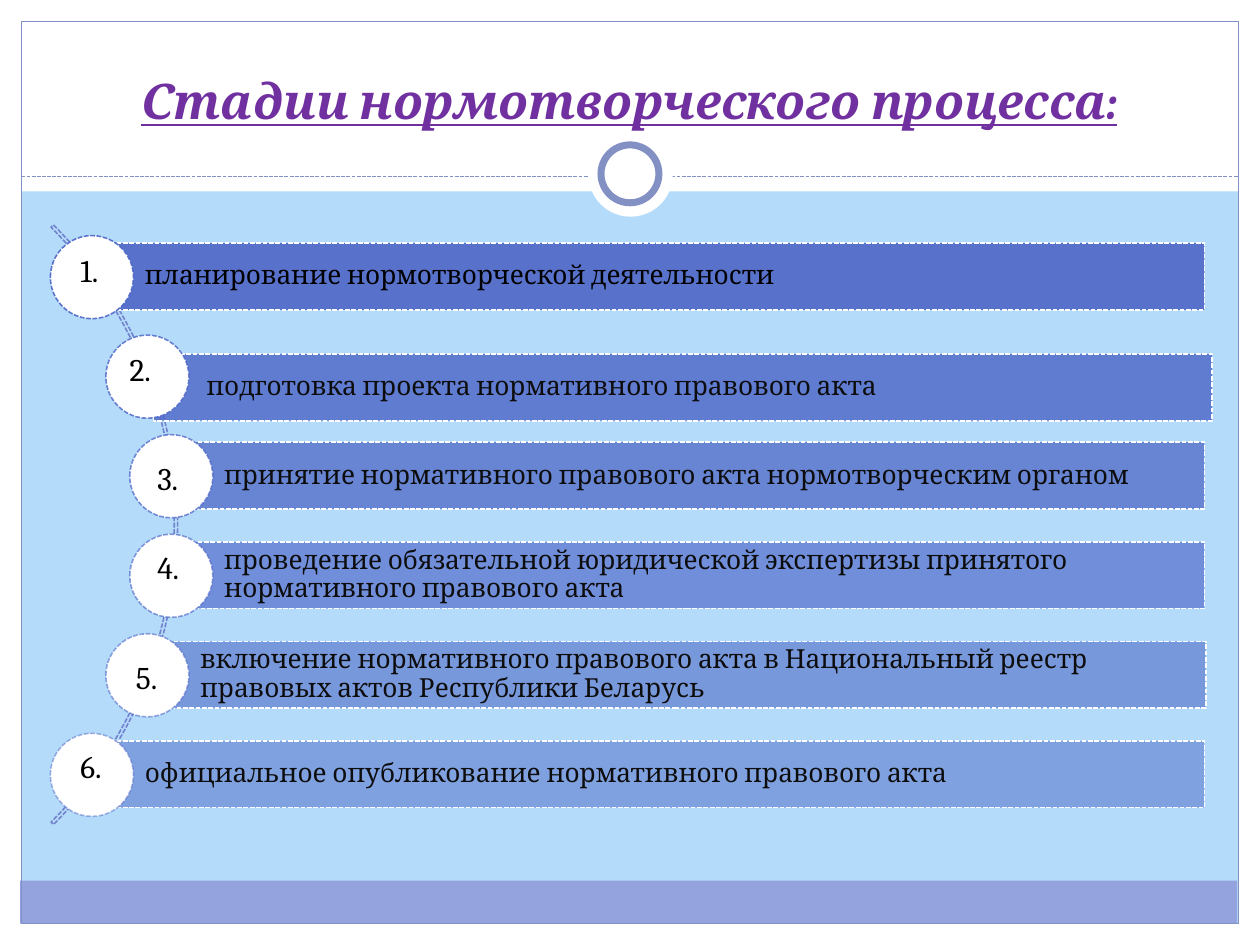
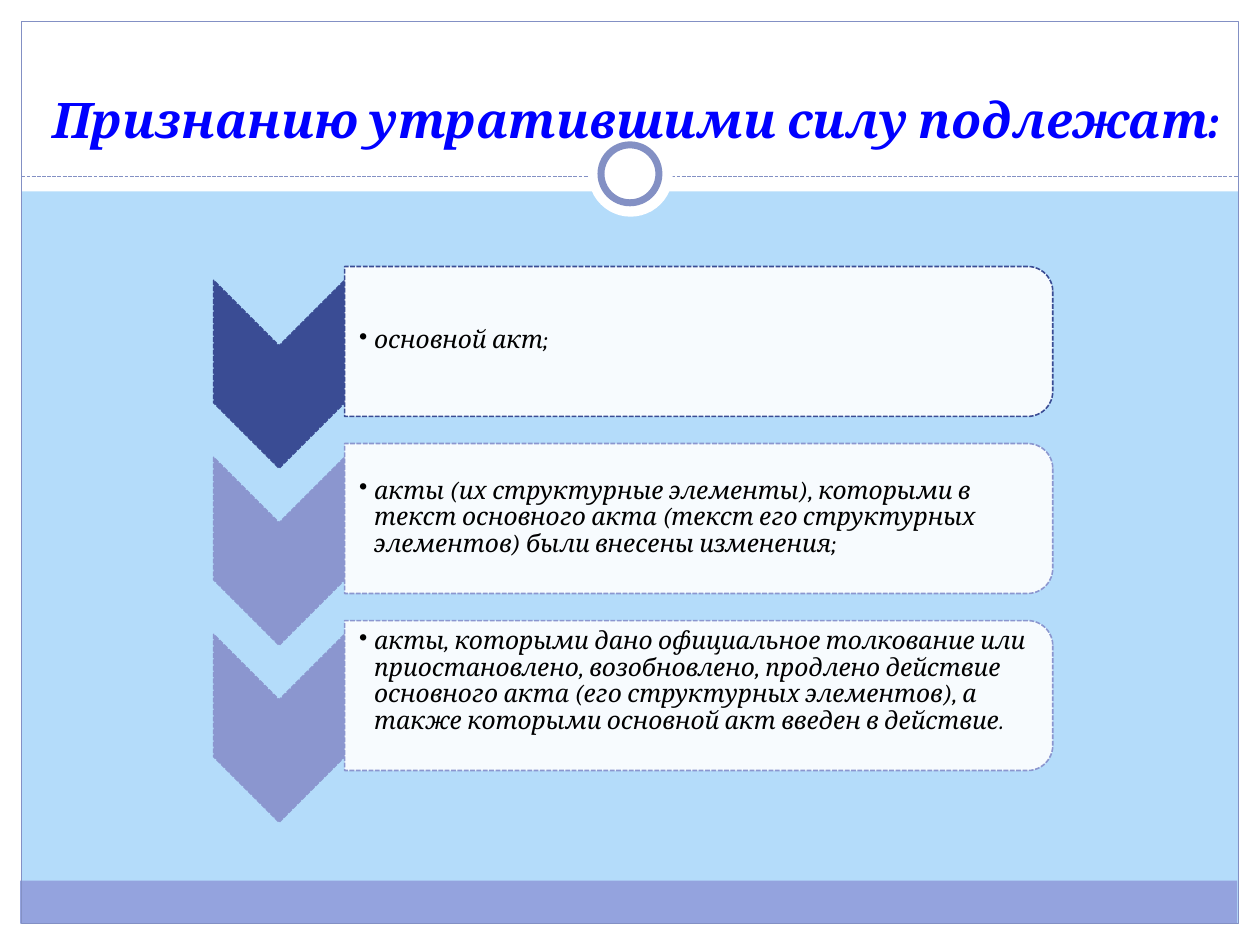
"""Build two slides on rule-making stages and acts to be repealed."""
import lxml.etree
import pptx
import pptx.dml.color
import pptx.enum.dml
import pptx.enum.shapes
import pptx.enum.text
import pptx.oxml
import pptx.oxml.ns
import pptx.util

Inches = pptx.util.Inches
Pt = pptx.util.Pt
RGBColor = pptx.dml.color.RGBColor
SHAPE = pptx.enum.shapes.MSO_SHAPE
ALIGN = pptx.enum.text.PP_ALIGN
ANCHOR = pptx.enum.text.MSO_ANCHOR
qn = pptx.oxml.ns.qn

SKY = RGBColor(0xB4, 0xDC, 0xFA)
WHITE = RGBColor(0xFF, 0xFF, 0xFF)
BLACK = RGBColor(0x00, 0x00, 0x00)
INK = RGBColor(0x0D, 0x0D, 0x0D)
BAND = RGBColor(0x94, 0xA3, 0xDE)
FRAME = RGBColor(0x83, 0x90, 0xC4)
PURPLE = RGBColor(0x70, 0x30, 0xA0)
BLUE = RGBColor(0x00, 0x00, 0xFF)
STAGE = RGBColor(0x4E, 0x67, 0xC8)
ARC = RGBColor(0x73, 0x82, 0xCE)
NAVY = RGBColor(0x3A, 0x4C, 0x94)
LILAC = RGBColor(0x8B, 0x96, 0xCF)

STAGES = [
    ("планирование нормотворческой деятельности", 0.4, (0.73, 1.93, 8.83), (0.54, 1.94)),
    ("подготовка проекта нормативного правового акта", 0.84, (1.22, 2.81, 8.4), (0.93, 2.73)),
    ("принятие нормативного правового акта нормотворческим органом",
     1.03, (1.36, 3.51, 8.2), (1.15, 3.59)),
    ("проведение обязательной юридической экспертизы принятого нормативного правового акта",
     1.03, (1.36, 4.3, 8.2), (1.15, 4.3)),
    ("включение нормативного правового акта в Национальный реестр правовых актов "
     "Республики Беларусь", 0.84, (1.17, 5.09, 8.4), (0.98, 5.17)),
    ("официальное опубликование нормативного правового акта",
     0.4, (0.73, 5.88, 8.83), (0.54, 5.88)),
]

ACTS = [
    ("основной акт;", NAVY, ANCHOR.MIDDLE),
    ("акты (их структурные элементы), которыми в текст основного акта (текст его "
     "структурных элементов) были внесены изменения;", LILAC, ANCHOR.MIDDLE),
    ("акты, которыми дано официальное толкование или приостановлено, возобновлено, "
     "продлено действие основного акта (его структурных элементов), а также которыми "
     "основной акт введен в действие.", LILAC, ANCHOR.TOP),
]


def write_text(frame, text, size, color, bold=False, italic=False, underline=False,
               align=ALIGN.LEFT, anchor=ANCHOR.TOP, insets=(0.1, 0.05, 0.1, 0.05),
               spacing=1.0, hanging=0):
    frame.word_wrap = True
    frame.auto_size = pptx.enum.text.MSO_AUTO_SIZE.NONE
    frame.vertical_anchor = anchor
    (frame.margin_left, frame.margin_top,
     frame.margin_right, frame.margin_bottom) = map(Inches, insets)
    paragraph = frame.paragraphs[0]
    paragraph.alignment = align
    paragraph.line_spacing = spacing
    run = paragraph.add_run()
    run.text = text
    font = run.font
    font.name, font.size, font.color.rgb = "Cambria", Pt(size), color
    font.bold, font.italic, font.underline = bold, italic, underline
    if hanging:
        properties = paragraph._p.get_or_add_pPr()
        properties.set("marL", str(Inches(hanging)))
        properties.set("indent", str(-Inches(hanging)))
        lxml.etree.SubElement(properties, qn("a:buChar")).set("char", "•")


def set_alpha(holder, percent):
    for color in holder.iter(qn("a:srgbClr")):
        lxml.etree.SubElement(color, qn("a:alpha")).set("val", str(percent * 1000))


class Deck:
    """Hold the shared style and the current slide."""

    def __init__(self):
        self.presentation = pptx.Presentation()
        self.presentation.slide_width = Inches(10)
        self.presentation.slide_height = Inches(7.5)
        self.layout = self.presentation.slide_layouts[5]
        background = self.presentation.slide_master.background.fill
        background.solid()
        background.fore_color.rgb = SKY
        self.slide = None
        self.framed = False

    def start(self, title, box, **style):
        self.slide = self.presentation.slides.add_slide(self.layout)
        if not self.framed:
            self.frame()
        heading = self.slide.shapes.title
        heading.left, heading.top, heading.width, heading.height = map(Inches, box)
        write_text(heading.text_frame, title, bold=True, italic=True,
                   align=ALIGN.CENTER, anchor=ANCHOR.BOTTOM, **style)

    def frame(self):
        margins = [(0, 7.33, 10, 0.17), (0, 0, 10, 1.52),
                   (0, 0, 0.17, 7.5), (9.83, 0, 0.17, 7.5)]
        parts = [self.shape(SHAPE.RECTANGLE, box, fill=WHITE) for box in margins]
        parts += [
            self.shape(SHAPE.RECTANGLE, (0.16, 6.99, 9.66, 0.34), fill=BAND),
            self.shape(SHAPE.RECTANGLE, (0.17, 0.17, 9.66, 7.16), line=FRAME,
                       width=0.75, dashed=False),
            self.dashed_rule((0.17, 1.4), (9.83, 1.4)),
            self.shape(SHAPE.OVAL, (4.67, 1.05, 0.67, 0.67), fill=WHITE),
            self.shape(SHAPE.OVAL, (4.77, 1.15, 0.46, 0.46), fill=WHITE, line=FRAME,
                       width=4, dashed=False),
        ]
        tree = self.layout.shapes._spTree
        for position, part in enumerate(parts, start=2):
            tree.insert(position, part._element)
        self.framed = True

    def shape(self, kind, box, fill=None, line=None, width=0.9, dashed=True,
              rotation=0, fill_alpha=100, line_alpha=100):
        shape = self.slide.shapes.add_shape(kind, *map(Inches, box))
        shape.shadow.inherit = False
        shape.rotation = rotation
        if fill is None:
            shape.fill.background()
        else:
            shape.fill.solid()
            shape.fill.fore_color.rgb = fill
            if fill_alpha < 100:
                set_alpha(shape._element.spPr.find(qn("a:solidFill")), fill_alpha)
        if line is None:
            shape.line.fill.background()
        else:
            self.stroke(shape.line, line, width, dashed)
            if line_alpha < 100:
                set_alpha(shape._element.spPr.find(qn("a:ln")), line_alpha)
        return shape

    def stroke(self, line, color, width, dashed):
        line.color.rgb = color
        line.width = Pt(width)
        if dashed:
            line.dash_style = pptx.enum.dml.MSO_LINE.SQUARE_DOT
            line._ln.find(qn("a:prstDash")).set("val", "sysDash")

    def dashed_rule(self, start, end):
        rule = self.slide.shapes.add_connector(
            pptx.enum.shapes.MSO_CONNECTOR.STRAIGHT, *map(Inches, start + end))
        self.stroke(rule.line, FRAME, 0.75, True)
        lxml.etree.SubElement(rule._element.spPr, qn("a:effectLst"))
        return rule

    def label(self, text, box, **style):
        label = self.slide.shapes.add_textbox(*map(Inches, box))
        write_text(label.text_frame, text, **style)


def build_stages(deck):
    deck.start("Стадии нормотворческого процесса:", (0.33, 0.13, 9.33, 0.95),
               size=27.9, color=PURPLE, underline=True)
    arc = deck.shape(SHAPE.BLOCK_ARC, (-5.32, 0.8, 6.73, 6.73), line=ARC)
    for index, value in enumerate((189, 27, 0.004)):
        arc.adjustments[index] = value
    for index, (text, circle_left, bar_box, _) in enumerate(STAGES):
        opacity = 90 - 8 * index
        bar = deck.shape(SHAPE.RECTANGLE, (*bar_box, 0.53), fill=STAGE, line=WHITE,
                         fill_alpha=opacity)
        write_text(bar.text_frame, text, size=15, color=INK if index else BLACK,
                   anchor=ANCHOR.MIDDLE, insets=(0.42, 0.04, 0.04, 0.04), spacing=0.9)
        deck.shape(SHAPE.OVAL, (circle_left, 1.87 + 0.79 * index, 0.66, 0.66),
                   fill=WHITE, line=STAGE, line_alpha=opacity)
    for number, (_, _, _, corner) in enumerate(STAGES, start=1):
        deck.label(f"{number}.", (*corner, 0.46, 0.4), size=18, color=BLACK)


def build_acts(deck):
    deck.start("Признанию утратившими силу подлежат:", (0.2, 0.25, 9.69, 0.98),
               size=28, color=BLUE)
    for index, (text, color, anchor) in enumerate(ACTS):
        drop = 1.405 * index
        deck.shape(SHAPE.CHEVRON, (1.47, 2.45 + drop, 1.49, 1.04), fill=color,
                   line=color, rotation=90)
        deck.shape(SHAPE.ROUND_2_SAME_RECTANGLE, (4.95, -0.1 + drop, 1.19, 5.62),
                   fill=WHITE, line=color, rotation=90, fill_alpha=90)
        deck.label(text, (2.74, 2.17 + drop, 5.57, 1.07), size=14, color=BLACK,
                   italic=True, anchor=anchor, insets=(0.11, 0.01, 0.01, 0.01),
                   spacing=0.9, hanging=0.12)


def main():
    deck = Deck()
    build_stages(deck)
    build_acts(deck)
    deck.presentation.save("out.pptx")


if __name__ == "__main__":
    main()
